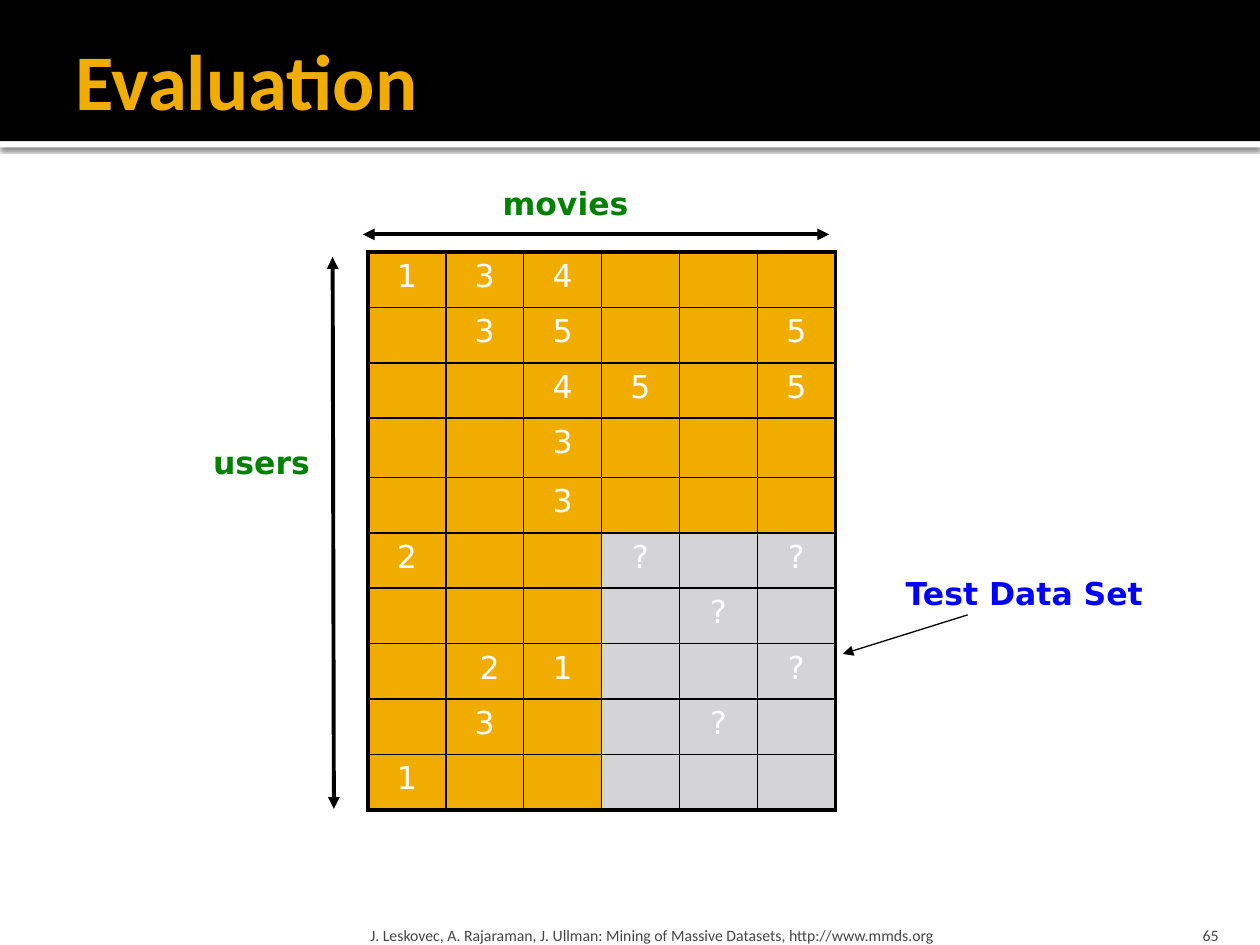
from lxml.etree import SubElement
from pptx import Presentation
from pptx.dml.color import RGBColor as Rgb
from pptx.enum.shapes import MSO_CONNECTOR as Connector, MSO_SHAPE as Preset
from pptx.enum.text import MSO_ANCHOR as Anchor, MSO_AUTO_SIZE as AutoSize, PP_ALIGN as Align
from pptx.oxml.ns import qn
from pptx.util import Inches, Pt

COLORS = {
    "black": "000000", "white": "FFFFFF", "gold": "F0AD00", "silver": "D4D4D6",
    "green": "008000", "blue": "0000FF", "gray": "454545",
}
SLIDE_W, SLIDE_H = Inches(10), Inches(7.5)
GRID_COLS, GRID_ROWS = 100, 75
LABEL_FONT, THEME_FONT = "DejaVu Sans", "Calibri"
THIN, THICK = 1, 2.25

RATINGS = [
    ["1", "3", "4", "", "", ""],
    ["", "3", "5", "", "", "5"],
    ["", "", "4", "5", "", "5"],
    ["", "", "3", "", "", ""],
    ["", "", "3", "", "", ""],
    ["2", "", "", "?", "", "?"],
    ["", "", "", "", "?", ""],
    ["", " 2", "1", "", "", "?"],
    ["", "3", "", "", "?", ""],
    ["1", "", "", "", "", ""],
]
TEST_ROW, TEST_COL = 5, 3
TALL_ROW = 3


def col(n):
    return round(SLIDE_W * n / GRID_COLS)


def row(n):
    return round(SLIDE_H * n / GRID_ROWS)


def box(left, top, width, height):
    return col(left), row(top), col(width), row(height)


def rgb(name):
    return Rgb.from_string(COLORS[name])


def style(paragraph, size, face, color, bold=False, align=Align.LEFT):
    paragraph.alignment = align
    font = paragraph.font
    font.size, font.name, font.bold = Pt(size), face, bold
    font.color.rgb = rgb(color)


def set_insets(frame, left, top, right, bottom):
    frame.margin_left, frame.margin_top = Inches(left), Inches(top)
    frame.margin_right, frame.margin_bottom = Inches(right), Inches(bottom)


def add_band(slide, area, color):
    band = slide.shapes.add_shape(Preset.RECTANGLE, *area)
    band.shadow.inherit = False
    band.fill.solid()
    band.fill.fore_color.rgb = rgb(color)
    band.line.fill.background()
    return band


def add_drop_shadow(band):
    effects = band.element.spPr.find(qn("a:effectLst"))
    shadow = SubElement(effects, qn("a:outerShdw"), blurRad=str(Pt(2.5)),
                        dist=str(Pt(0.8)), dir="5400000", rotWithShape="0")
    tint = SubElement(shadow, qn("a:srgbClr"), val=COLORS["black"])
    SubElement(tint, qn("a:alpha"), val="60000")


def add_header(slide):
    stripe = add_band(slide, box(0, 11.2, 100, 0.5), "white")
    add_drop_shadow(stripe)
    header = add_band(slide, box(0, 0, 100, 11.2), "black")
    title = slide.shapes.title
    header.element.addnext(title.element)
    title.left, title.top, title.width, title.height = box(5, 1.7, 90, 9.2)
    title.text = "Evaluation"
    frame = title.text_frame
    frame.vertical_anchor = Anchor.MIDDLE
    frame.auto_size = AutoSize.NONE
    set_insets(frame, 0.1, 0.05, 0.05, 0.05)
    style(frame.paragraphs[0], 45, THEME_FONT, "gold", bold=True)


def add_border(cell, side, width):
    line = SubElement(cell._tc.get_or_add_tcPr(), qn(f"a:ln{side}"), w=str(Pt(width)))
    fill = SubElement(line, qn("a:solidFill"))
    SubElement(fill, qn("a:srgbClr"), val=COLORS["black"])


def fill_cell(cell, rating, r, c):
    last_row, last_col = len(RATINGS) - 1, len(RATINGS[0]) - 1
    outer = {"L": c == 0, "R": c == last_col, "T": r == 0, "B": r == last_row}
    for side, at_edge in outer.items():
        add_border(cell, side, THICK if at_edge else THIN)
    in_test_set = r >= TEST_ROW and c >= TEST_COL
    cell.fill.solid()
    cell.fill.fore_color.rgb = rgb("silver" if in_test_set else "gold")
    cell.text = rating
    paragraph = cell.text_frame.paragraphs[0]
    paragraph.space_before = Pt(3.6)
    style(paragraph, 18, LABEL_FONT, "white", align=Align.CENTER)


def add_ratings(slide):
    rows, cols = len(RATINGS), len(RATINGS[0])
    area = box(29.2, 20, 37.1, 44)
    ratings = slide.shapes.add_table(rows, cols, *area).table
    ratings.first_row = ratings.horz_banding = False
    for r, user in enumerate(RATINGS):
        ratings.rows[r].height = row(4.7 if r == TALL_ROW else 4.4)
        for c, rating in enumerate(user):
            fill_cell(ratings.cell(r, c), rating, r, c)


def add_label(slide, area, text, color, wrap=False, align=Align.LEFT):
    frame = slide.shapes.add_textbox(*area).text_frame
    frame.word_wrap = wrap
    frame.auto_size = AutoSize.SHAPE_TO_FIT_TEXT
    frame.text = text
    style(frame.paragraphs[0], 18, LABEL_FONT, color, bold=True, align=align)


def add_arrow(slide, start, end, width, ends):
    (x1, y1), (x2, y2) = start, end
    arrow = slide.shapes.add_connector(Connector.STRAIGHT, col(x1), row(y1), col(x2), row(y2))
    arrow.line.width = Pt(width)
    arrow.line.color.rgb = rgb("black")
    line = arrow.line._get_or_add_ln()
    for end_name in ends:
        SubElement(line, qn(f"a:{end_name}"), type="triangle")
    SubElement(arrow.element.spPr, qn("a:effectLst"))


def add_footer(slide, area, text, side_inset, align=Align.LEFT):
    frame = slide.shapes.add_textbox(*area).text_frame
    frame.word_wrap = True
    frame.vertical_anchor = Anchor.BOTTOM
    set_insets(frame, side_inset, 0.05, side_inset, 0)
    frame.text = text
    style(frame.paragraphs[0], 9, THEME_FONT, "gray", align=align)


def main():
    deck = Presentation()
    deck.slide_width, deck.slide_height = SLIDE_W, SLIDE_H
    slide = deck.slides.add_slide(deck.slide_layouts[5])
    slide.background.fill.solid()
    slide.background.fill.fore_color.rgb = rgb("white")

    add_header(slide)
    add_ratings(slide)
    add_label(slide, box(70.9, 45.1, 21, 4), "Test Data Set", "blue")
    add_label(slide, box(11, 34.7, 19.5, 4), "users", "green", wrap=True, align=Align.CENTER)
    both_ends = ("headEnd", "tailEnd")
    add_arrow(slide, (26.4, 20.4), (26.5, 64.2), THICK, both_ends)
    add_arrow(slide, (28.8, 18.6), (65.8, 18.6), THICK, both_ends)
    add_arrow(slide, (76.8, 48.8), (66.9, 51.9), 0.75, ("tailEnd",))
    add_label(slide, box(38.9, 14.1, 12.1, 4), "movies", "green")
    add_footer(slide, box(28.9, 72, 60.2, 3),
               "J. Leskovec, A. Rajaraman, J. Ullman: Mining of Massive Datasets, "
               "http://www.mmds.org", 0.05)
    add_footer(slide, box(89.7, 72, 8, 3), "65", 0.1, align=Align.RIGHT)
    deck.save("out.pptx")


if __name__ == "__main__":
    main()
